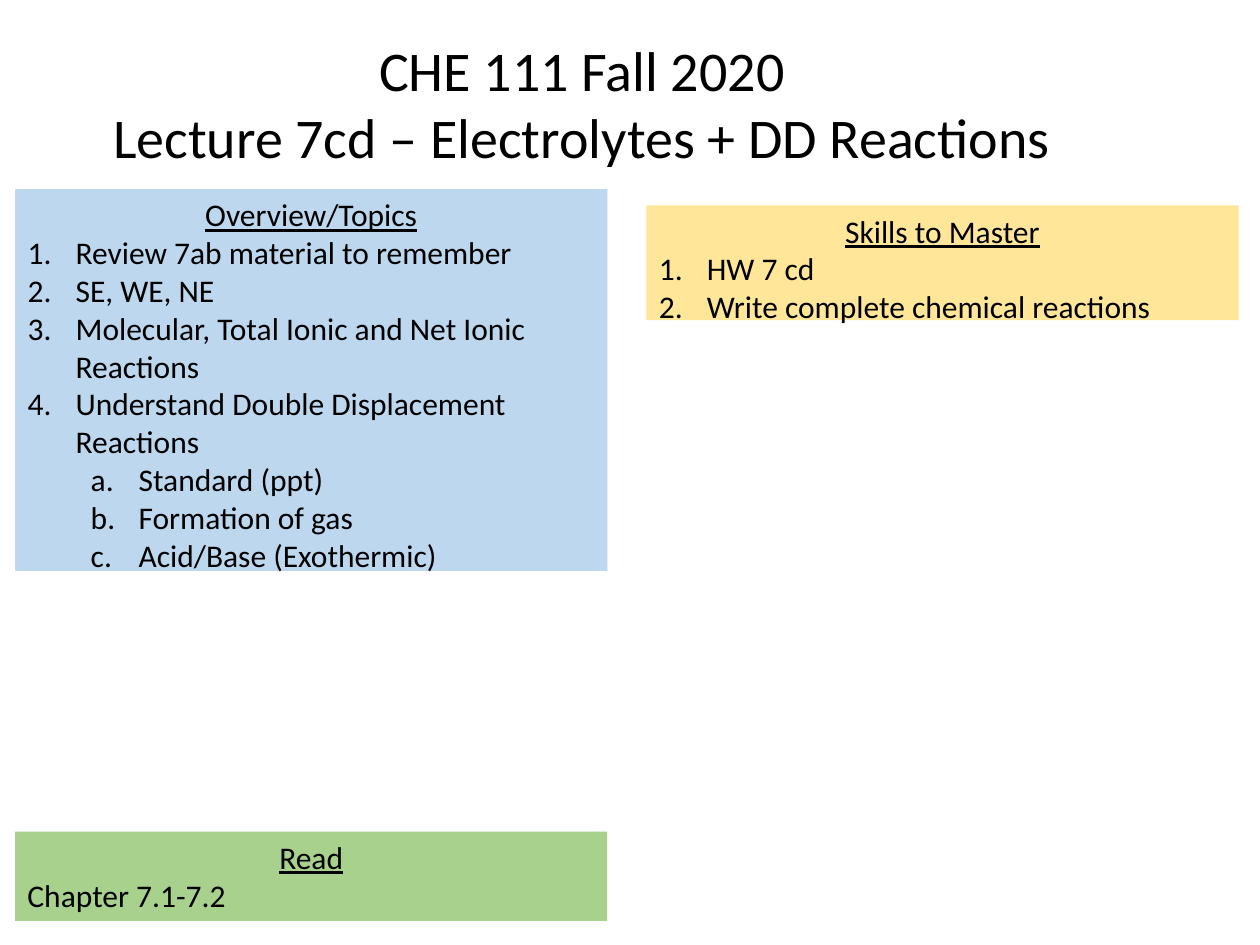
from dataclasses import dataclass

from lxml.etree import SubElement
from pptx import Presentation
from pptx.dml.color import RGBColor
from pptx.enum.text import MSO_ANCHOR, MSO_AUTO_SIZE, PP_ALIGN
from pptx.oxml.ns import qn
from pptx.util import Inches, Pt


@dataclass(frozen=True)
class Theme:
    font: str = "Calibri"
    title_size: int = 32
    body_size: int = 18
    ink: str = "000000"
    blue: str = "BDD7EE"
    yellow: str = "FFE699"
    green: str = "A9D18E"


THEME = Theme()

TITLE = ["CHE 111 Fall 2020", "Lecture 7cd – Electrolytes + DD Reactions"]
TITLE_PLACE = (0.76, 0.23, 7.72, 1.18)

LEFT, RIGHT, PANEL_WIDTH = 0.12, 5.13, 4.7
NUMBER, LETTER, PLAIN = "arabicPeriod", "alphaLcPeriod", None
INDENT, LEVEL_STEP = 0.38, 0.5

PANELS = [
    {
        "heading": "Overview/Topics",
        "place": (LEFT, 1.5, PANEL_WIDTH, 3.13),
        "fill": THEME.blue,
        "items": [
            (NUMBER, "Review 7ab material to remember"),
            (NUMBER, "SE, WE, NE"),
            (NUMBER, "Molecular, Total Ionic and Net Ionic Reactions"),
            (NUMBER, "Understand Double Displacement Reactions"),
            (LETTER, "Standard (ppt)"),
            (LETTER, "Formation of gas"),
            (LETTER, "Acid/Base (Exothermic)"),
        ],
    },
    {
        "heading": "Skills to Master",
        "place": (RIGHT, 1.63, PANEL_WIDTH, 1.01),
        "fill": THEME.yellow,
        "items": [
            (NUMBER, "HW 7 cd"),
            (NUMBER, "Write complete chemical reactions"),
        ],
    },
    {
        "heading": "Read",
        "place": (LEFT, 6.6, PANEL_WIDTH, 0.71),
        "fill": THEME.green,
        "items": [(PLAIN, "Chapter 7.1-7.2")],
    },
]


def put(box, place):
    box.left, box.top, box.width, box.height = map(Inches, place)


def prepare(frame, wrap):
    frame.word_wrap = wrap
    frame.auto_size = MSO_AUTO_SIZE.SHAPE_TO_FIT_TEXT
    frame.vertical_anchor = MSO_ANCHOR.TOP


def write(frame, index, text, size, align, underline=False, numbering=PLAIN):
    para = frame.paragraphs[0] if index == 0 else frame.add_paragraph()
    para.alignment = align
    para.space_before = Pt(0)
    para.level = 1 if numbering == LETTER else 0
    properties = para._p.get_or_add_pPr()
    hanging = Inches(INDENT) if numbering else 0
    margin = hanging + Inches(LEVEL_STEP) * para.level
    properties.set("marL", str(margin))
    properties.set("indent", str(-hanging))
    if numbering:
        SubElement(properties, qn("a:buFont"), typeface="+mj-lt")
        SubElement(properties, qn("a:buAutoNum"), type=numbering)
    else:
        SubElement(properties, qn("a:buNone"))
    span = para.add_run()
    span.text = text
    span.font.name = THEME.font
    span.font.size = Pt(size)
    span.font.underline = underline
    span.font.color.rgb = RGBColor.from_string(THEME.ink)


def fill_panel(box, panel):
    put(box, panel["place"])
    box.fill.solid()
    box.fill.fore_color.rgb = RGBColor.from_string(panel["fill"])
    frame = box.text_frame
    prepare(frame, wrap=True)
    write(frame, 0, panel["heading"], THEME.body_size, PP_ALIGN.CENTER, underline=True)
    for index, (numbering, text) in enumerate(panel["items"], start=1):
        write(frame, index, text, THEME.body_size, PP_ALIGN.LEFT, numbering=numbering)


def main():
    deck = Presentation()
    deck.slide_width, deck.slide_height = Inches(10), Inches(7.5)
    page = deck.slides.add_slide(deck.slide_layouts.get_by_name("Two Content"))

    title = page.shapes.title
    put(title, TITLE_PLACE)
    prepare(title.text_frame, wrap=False)
    for index, line in enumerate(TITLE):
        write(title.text_frame, index, line, THEME.title_size, PP_ALIGN.CENTER)

    reading_box = page.shapes.add_textbox(*map(Inches, PANELS[-1]["place"]))
    boxes = [page.placeholders[1], page.placeholders[2], reading_box]
    for box, panel in zip(boxes, PANELS):
        fill_panel(box, panel)

    deck.save("out.pptx")


if __name__ == "__main__":
    main()
